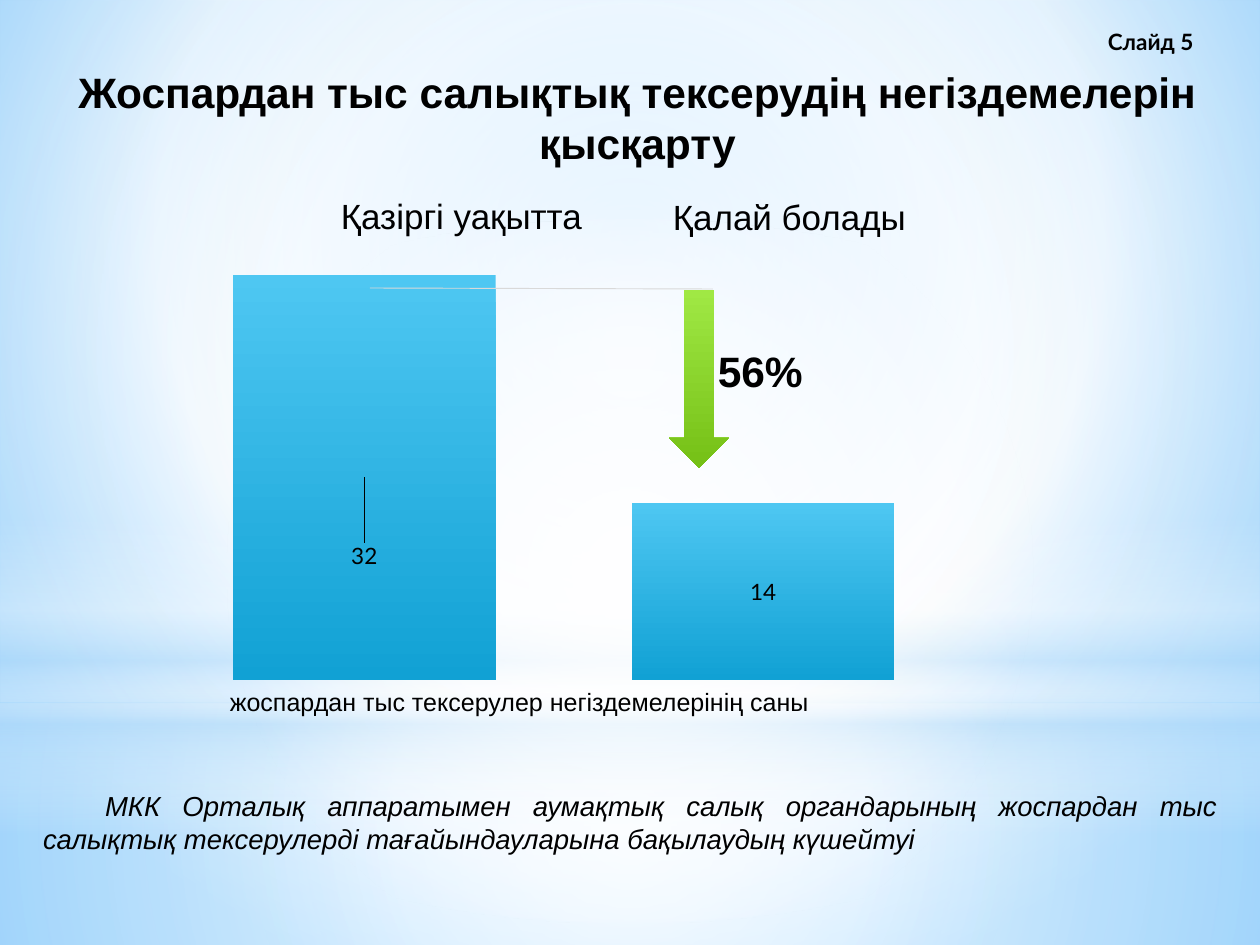
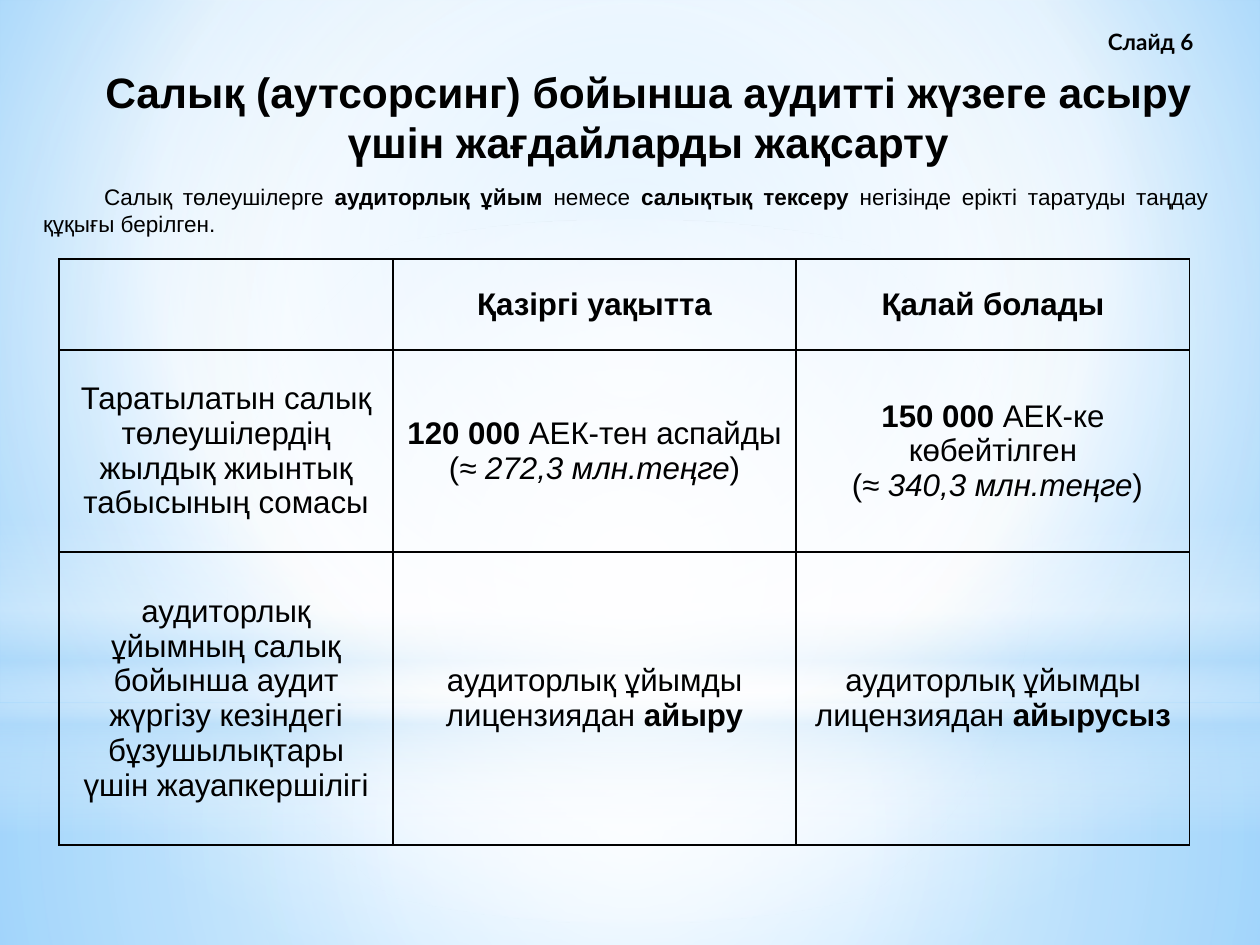
from lxml.etree import SubElement as Sub
from pptx import Presentation
from pptx.chart.data import CategoryChartData as Data
from pptx.dml.color import RGBColor as RGB
from pptx.enum.chart import XL_CHART_TYPE as Kind, XL_LABEL_POSITION as Spot
from pptx.enum.shapes import MSO_CONNECTOR as Link, MSO_SHAPE as Geo
from pptx.enum.text import MSO_ANCHOR as Anchor, MSO_AUTO_SIZE as Fit, PP_ALIGN as Align
from pptx.oxml import parse_xml
from pptx.oxml.ns import nsdecls, qn
from pptx.util import Pt

PX = 10160
WIDE, HIGH = 1260, 945
SANS, LATO = "Arial", "Lato"
BLACK = RGB(0x00, 0x00, 0x00)
WHITE = RGB(0xFF, 0xFF, 0xFF)
GRAY = RGB(0xD9, 0xD9, 0xD9)
PALE = RGB(0xB4, 0xDC, 0xFA)
SKY = RGB(0x9E, 0xD5, 0xFF)
AZURE = RGB(0x5B, 0xB9, 0xFF)
CYAN = RGB(0x4E, 0xC7, 0xF2)
BLUE = RGB(0x11, 0xA1, 0xD4)
LIME = RGB(0xA0, 0xE8, 0x44)
GREEN = RGB(0x75, 0xC0, 0x16)
PAD = dict(margin_left=13 * PX, margin_right=13 * PX, margin_top=6 * PX, margin_bottom=6 * PX)
MID = (50, 50, 50, 50)
GLOW = [
    (Geo.RECTANGLE, (0, 704, WIDE, 241), [(0, WHITE, 91), (37, WHITE, 76), (100, PALE, 79)], MID),
    (Geo.RECTANGLE, (0, 0, WIDE, 704), [(0, WHITE, 89), (48, WHITE, 62), (100, PALE, 79)], MID),
    (Geo.RECTANGLE, (0, 519, WIDE, 315), [(0, WHITE, 0), (29, WHITE, 30), (45, PALE, 40),
                                        (55, WHITE, 26), (65, PALE, 60), (100, WHITE, 0)], None),
    (Geo.OVAL, (0, 220, WIDE, 704), [(0, WHITE, 100), (56, WHITE, 0)], MID),
]
NOW, NEXT = "Қазіргі уақытта", "Қалай болады"
FIRM = "аудиторлық ұйымды лицензиядан "
ROWS = [
    ["", [[(NOW, "b")]], [[(NEXT, "b")]]],
    ["Таратылатын салық төлеушілердің жылдық жиынтық табысының сомасы",
     [[("120 000", "b"), (" АЕК-тен аспайды (", ""), ("≈ 272,3 млн.теңге", "i"), (")", "")]],
     [[("150 000", "b"), (" АЕК-ке көбейтілген", "")],
      [(" (", ""), ("≈ 340,3 млн.теңге", "i"), (")", "")]]],
    ["аудиторлық ұйымның салық бойынша аудит жүргізу кезіндегі бұзушылықтары үшін жауапкершілігі",
     [[(FIRM, ""), ("айыру", "b")]],
     [[(FIRM, ""), ("айырусыз", "b")]]],
]


def put(obj, **vals):
    """Set every given attribute on an object."""
    for name, val in vals.items():
        setattr(obj, name, val)


def box(*px):
    """Turn px lengths into EMU."""
    return [n * PX for n in px]


def blend(fill, host, stops, focus=None):
    """Give a fill a gradient, round about a focus or else from top to bottom."""
    fill.solid()
    flat = host.find(".//" + qn("a:solidFill"))
    grad = parse_xml(f'<a:gradFill {nsdecls("a")} rotWithShape="1"><a:gsLst/></a:gradFill>')
    for pos, tone, alpha in stops:
        stop = Sub(grad[0], qn("a:gs"), pos=str(pos * 1000))
        clr = Sub(stop, qn("a:srgbClr"), val=str(tone))
        if alpha < 100:
            Sub(clr, qn("a:alpha"), val=str(alpha * 1000))
    if focus:
        ring = Sub(grad, qn("a:path"), {"path": "circle"})
        Sub(ring, qn("a:fillToRect"), {k: str(n * 1000) for k, n in zip("ltrb", focus)})
    else:
        Sub(grad, qn("a:lin"), ang="5400000", scaled="0")
    flat.getparent().replace(flat, grad)


def form(slide, geo, area, stops, focus=None):
    """Draw a preset shape with a gradient and no outline."""
    shape = slide.shapes.add_shape(geo, *box(*area))
    shape.shadow.inherit = False
    shape.line.fill.background()
    blend(shape.fill, shape.element.spPr, stops, focus)
    return shape


def dress(master, slide):
    """Put the shared background and glow on the master."""
    fill = master.background.fill
    blend(fill, master.element.find(".//" + qn("p:bgPr")),
          [(0, SKY, 100), (60, WHITE, 100), (100, AZURE, 100)], (20, 10, 20, 60))
    for n, spec_row in enumerate(GLOW):
        item = form(slide, *spec_row).element
        item.nvSpPr.cNvPr.set("id", str(100 + n))
        master.element.cSld.spTree.insert(2 + n, item)


def write(frame, text, size, font=SANS, style="", align=Align.LEFT, left=0, first=0):
    """Fill a text frame from a string or from paragraphs of styled runs."""
    paras = [[(text, style)]] if isinstance(text, str) else text
    for n, runs in enumerate(paras):
        par = frame.add_paragraph() if n else frame.paragraphs[0]
        par.alignment = align
        if left or first:
            props = par._p.get_or_add_pPr()
            props.set("marL", str(left * PX))
            props.set("indent", str(first * PX))
        for words, look in runs:
            run = par.add_run()
            run.text = words
            put(run.font, name=font, size=Pt(size), bold="b" in look, italic="i" in look)
            run.font.color.rgb = BLACK


def label(slide, area, text, size, wrap=False, pad=None, **look):
    """Add a text box that grows with its text."""
    frame = slide.shapes.add_textbox(*box(*area)).text_frame
    put(frame, word_wrap=wrap, auto_size=Fit.SHAPE_TO_FIT_TEXT, **(pad or {}))
    write(frame, text, size, **look)


def head(slide, area, text, num, left=0):
    """Set the title and the slide number label."""
    title = slide.shapes.title
    put(title, **dict(zip(("left", "top", "width", "height"), box(*area))))
    put(title.text_frame, word_wrap=True, auto_size=Fit.NONE, vertical_anchor=Anchor.MIDDLE, **PAD)
    write(title.text_frame, text, 34, style="b", align=Align.CENTER, left=left)
    label(slide, (1099, 24, 115, 36), f"Слайд {num}", 18, wrap=True, font=LATO, style="b")


def place(host, pos, **vals):
    """Insert a manual chart layout into a chart part."""
    for old in host.findall(qn("c:layout")):
        host.remove(old)
    lay = parse_xml(f'<c:layout {nsdecls("c")}><c:manualLayout/></c:layout>')
    for name, val in vals.items():
        Sub(lay[0], qn("c:" + name), val=str(val))
    host.insert(pos, lay)


def bars(slide, area, vals):
    """Add the column chart of the number of grounds."""
    data = Data()
    data.categories = ["1", "2"]
    data.add_series("Series 1", vals)
    chart = slide.shapes.add_chart(Kind.COLUMN_STACKED, *box(*area), data).chart
    put(chart, has_legend=False, has_title=False)
    put(chart.font, name=LATO, size=Pt(18))
    chart.font.color.rgb = BLACK
    put(chart.value_axis, visible=False, has_major_gridlines=False,
        minimum_scale=0, maximum_scale=35)
    chart.category_axis.visible = False
    plot = chart.plots[0]
    put(plot, gap_width=52, overlap=100, vary_by_categories=False)
    bar = plot.series[0]
    blend(bar.format.fill, bar.format.fill._xPr, [(0, CYAN, 100), (100, BLUE, 100)])
    put(bar.data_labels, show_value=True, position=Spot.CENTER)
    bar.points[0].data_label.position = Spot.CENTER
    place(bar.data_labels._element.find(qn("c:dLbl")), 1, x=0, y=0.14)
    place(chart._chartSpace.chart.plotArea, 0, layoutTarget="inner", xMode="edge", yMode="edge",
          x=0.02, y=0.16, w=0.95, h=0.79)


def rule(slide, ends):
    """Draw a thin gray line."""
    line = slide.shapes.add_connector(Link.STRAIGHT, *box(*ends))
    line.line.color.rgb = GRAY
    line.line.width = Pt(0.75)
    Sub(line.element.spPr, qn("a:effectLst"))


def edge(cell):
    """Give a cell thin black borders."""
    props = cell._tc.get_or_add_tcPr()
    for n, side in enumerate(("lnL", "lnR", "lnT", "lnB")):
        props.insert(n, parse_xml(
            f'<a:{side} {nsdecls("a")} w="12700"><a:solidFill>'
            f'<a:srgbClr val="{BLACK}"/></a:solidFill></a:{side}>'))


def grid(slide, area, cols, rows):
    """Add the table that compares the terms."""
    table = slide.shapes.add_table(len(rows), len(cols), *box(*area)).table
    put(table, first_row=False, horz_banding=False)
    for col, wide in zip(table.columns, cols):
        col.width = wide * PX
    for row, high, texts in zip(table.rows, rows, ROWS):
        row.height = high * PX
        for cell, text in zip(row.cells, texts):
            put(cell, vertical_anchor=Anchor.MIDDLE, **PAD)
            cell.fill.background()
            edge(cell)
            if text:
                write(cell.text_frame, text, 25, align=Align.CENTER)


def cuts(slide):
    """Build the slide on fewer grounds for checks."""
    head(slide, (49, 53, 1177, 129), "Жоспардан тыс салықтық тексерудің негіздемелерін қысқарту", 5)
    bars(slide, (148, 148, 840, 560), (32, 14))
    label(slide, (709, 341, 116, 60), "56%", 34, style="b")
    label(slide, (332, 190, 262, 51), NOW, 28)
    label(slide, (664, 191, 254, 51), NEXT, 28)
    label(slide, (221, 682, 621, 40), "жоспардан тыс тексерулер негіздемелерінің саны", 20)
    form(slide, Geo.DOWN_ARROW, (669, 290, 60, 178), [(0, LIME, 100), (100, GREEN, 100)])
    rule(slide, (370, 288, 713, 289))
    label(slide, (30, 783, 1200, 79),
          "МКК Орталық аппаратымен аумақтық салық органдарының жоспардан тыс салықтық "
          "тексерулерді тағайындауларына бақылаудың күшейтуі",
          22, wrap=True, pad=PAD, style="i", align=Align.JUSTIFY, first=62)


def audit(slide):
    """Build the slide on tax audit terms."""
    head(slide, (30, 52, 1225, 129),
         "Салық (аутсорсинг) бойынша аудитті жүзеге асыру үшін жағдайларды жақсарту", 6, left=12)
    grid(slide, (59, 259, 1131, 586), (334, 403, 394), (91, 202, 293))
    label(slide, (30, 177, 1191, 68),
          [[("Салық төлеушілерге ", ""), ("аудиторлық ұйым", "b"), (" немесе ", ""),
            ("салықтық тексеру", "b"), (" негізінде ерікті таратуды таңдау құқығы берілген.", "")]],
          18, wrap=True, pad=PAD, align=Align.JUSTIFY, first=61)


def main():
    """Build and save the presentation."""
    prs = Presentation()
    put(prs, slide_width=WIDE * PX, slide_height=HIGH * PX)
    first, second = (prs.slides.add_slide(prs.slide_layouts[5]) for _ in range(2))
    dress(prs.slide_master, first)
    cuts(first)
    audit(second)
    prs.save("out.pptx")


if __name__ == "__main__":
    main()
